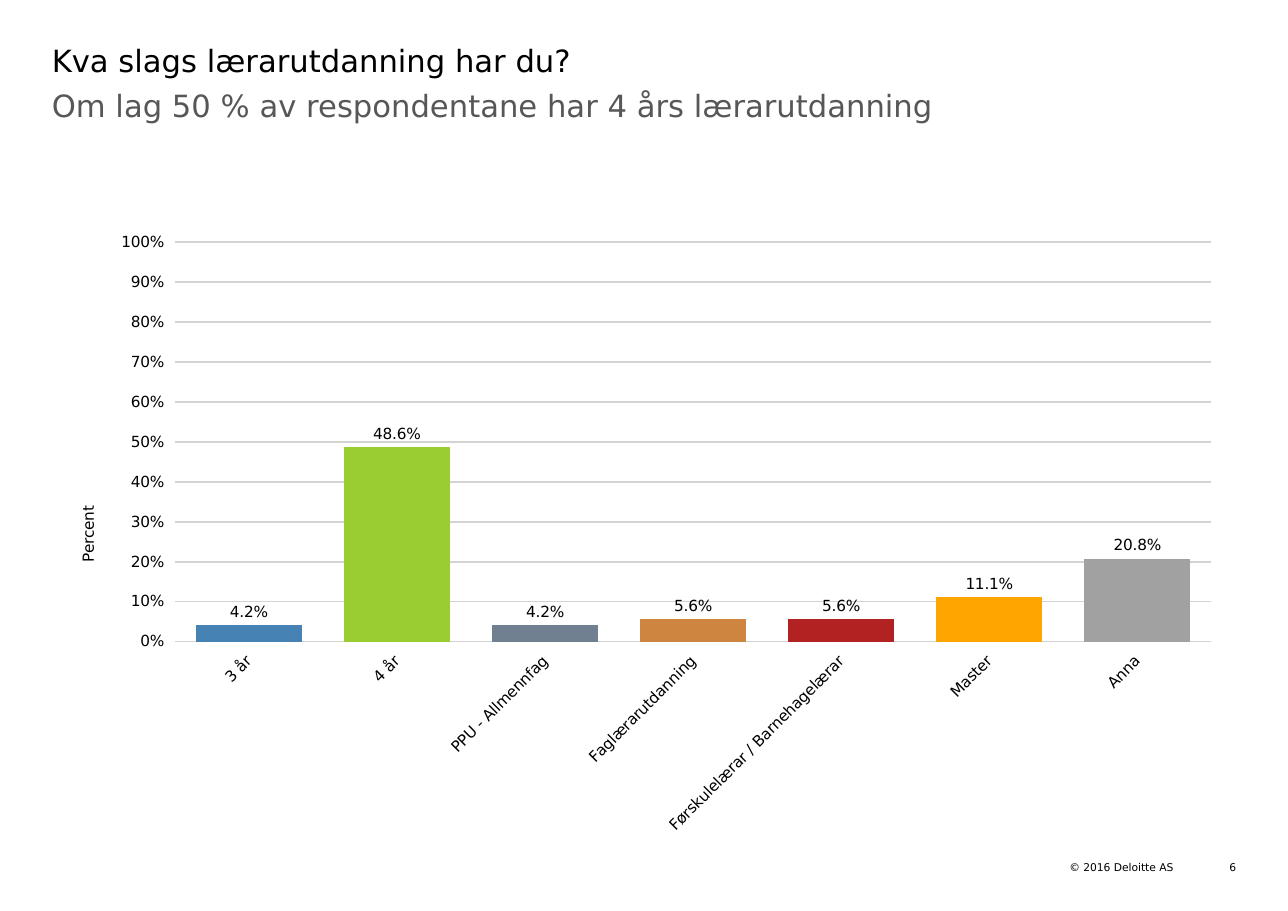
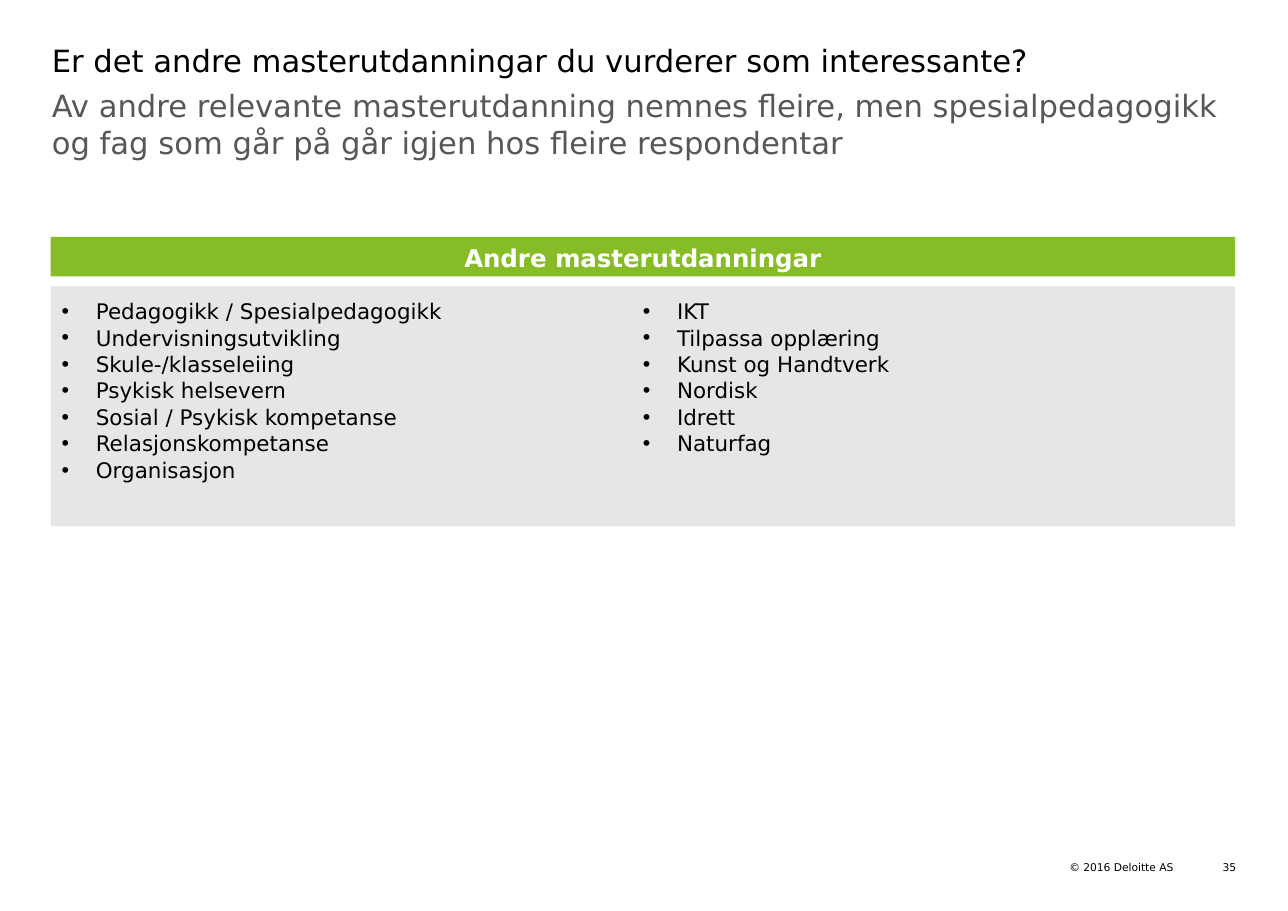
import dataclasses
import typing

import pptx
import pptx.chart.data
import pptx.dml.color
import pptx.enum.chart
import pptx.enum.shapes
import pptx.enum.text
import pptx.oxml
import pptx.oxml.ns
import pptx.util

ALIGN = pptx.enum.text.PP_ALIGN
ANCHOR = pptx.enum.text.MSO_ANCHOR
FONT = "DejaVu Sans"
BLACK, WHITE, GREY_TEXT = "000000", "FFFFFF", "575757"
GREEN, PANEL_GREY, GRID_GREY = "86BC25", "E7E6E6", "D3D3D3"
SLIDE_WIDTH, SLIDE_HEIGHT = 11.69, 8.27
INSET, INDENT = 0.1, 0.31
TITLE_LAYOUT, COMPARISON_LAYOUT = 1, 4


@dataclasses.dataclass(frozen=True)
class Area:
    left: float
    top: float
    width: float
    height: float

    def inches(self) -> list[int]:
        return [pptx.util.Inches(value) for value in dataclasses.astuple(self)]

    def column(self, index: int, count: int) -> "Area":
        width = (self.width - 2 * INSET) / count
        return Area(self.left + INSET + index * width, self.top + INSET,
                    width, self.height - 2 * INSET)


@dataclasses.dataclass(frozen=True)
class Style:
    size: float
    color: str = BLACK
    bold: bool = False
    align: ALIGN = ALIGN.LEFT
    anchor: ANCHOR = ANCHOR.TOP
    wrap: bool = True
    spacing: float = 1.0
    bullet: bool = False


@dataclasses.dataclass(frozen=True)
class Bar:
    category: str
    share: float
    color: str


TITLE_AREA = Area(0.47, 0.38, 10.74, 0.4)
SUBTITLE_AREA = Area(0.47, 0.79, 10.74, 0.91)
CHART_AREA = Area(0.47, 2.01, 10.74, 5.68)
BAND_AREA = Area(0.46, 2.15, 10.75, 0.36)
PANEL_AREA = Area(0.46, 2.6, 10.75, 2.18)
COPYRIGHT_AREA = Area(9.68, 7.81, 0.97, 0.12)
NUMBER_AREA = Area(10.92, 7.81, 0.3, 0.12)

TITLE_STYLE = Style(20)
SUBTITLE_STYLE = Style(20, GREY_TEXT)
FOOTER_STYLE = Style(7, align=ALIGN.RIGHT, anchor=ANCHOR.MIDDLE, wrap=False)
BAND_STYLE = Style(16, WHITE, True, ALIGN.CENTER, ANCHOR.MIDDLE, spacing=1.06)
LIST_STYLE = Style(14, spacing=1.03, bullet=True)

BARS = [
    Bar("3 år", 0.042, "4682B4"),
    Bar("4 år", 0.486, "9ACD32"),
    Bar("PPU - Allmennfag", 0.042, "708090"),
    Bar("Faglærarutdanning", 0.056, "CD853F"),
    Bar("Førskulelærar / Barnehagelærar", 0.056, "B22222"),
    Bar("Master", 0.111, "FFA500"),
    Bar("Anna", 0.208, "A1A1A1"),
]
SUBJECT_COLUMNS = [
    ["Pedagogikk / Spesialpedagogikk", "Undervisningsutvikling",
     "Skule-/klasseleiing", "Psykisk helsevern",
     "Sosial / Psykisk kompetanse", "Relasjonskompetanse", "Organisasjon"],
    ["IKT", "Tilpassa opplæring", "Kunst og Handtverk", "Nordisk", "Idrett",
     "Naturfag"],
]


def rgb(color: str) -> pptx.dml.color.RGBColor:
    return pptx.dml.color.RGBColor.from_string(color)


def format_font(font: typing.Any, style: Style) -> None:
    font.name = FONT
    font.size = pptx.util.Pt(style.size)
    font.bold = style.bold
    font.color.rgb = rgb(style.color)


def set_indent(para: typing.Any, bullet: bool) -> None:
    properties = para._p.get_or_add_pPr()
    indent = pptx.util.Inches(INDENT) if bullet else 0
    properties.set("marL", str(indent))
    properties.set("indent", str(-indent))
    mark = pptx.oxml.ns.qn("a:buChar" if bullet else "a:buNone")
    element = properties.makeelement(mark, {"char": "•"} if bullet else {})
    properties.append(element)


def write(box: typing.Any, lines: list[str], style: Style) -> None:
    frame = box.text_frame
    frame.text = "\n".join(lines)
    frame.auto_size = pptx.enum.text.MSO_AUTO_SIZE.NONE
    frame.word_wrap = style.wrap
    frame.vertical_anchor = style.anchor
    frame.margin_left = frame.margin_right = 0
    frame.margin_top = frame.margin_bottom = 0
    for para in frame.paragraphs:
        set_indent(para, style.bullet)
        para.alignment = style.align
        para.line_spacing = style.spacing
        para.space_before = para.space_after = pptx.util.Pt(0)
        for span in para.runs:
            format_font(span.font, style)


def fill_placeholder(page: typing.Any, index: int, area: Area,
                     lines: list[str], style: Style) -> None:
    box = page.placeholders[index]
    box.left, box.top, box.width, box.height = area.inches()
    write(box, lines, style)


def add_rectangle(page: typing.Any, area: Area, color: str) -> typing.Any:
    shape = page.shapes.add_shape(
        pptx.enum.shapes.MSO_SHAPE.RECTANGLE, *area.inches())
    shape.shadow.inherit = False
    shape.fill.solid()
    shape.fill.fore_color.rgb = rgb(color)
    shape.line.fill.background()
    return shape


def add_page(deck: typing.Any, layout: int, title: str, subtitle: str,
             number: int) -> typing.Any:
    page = deck.slides.add_slide(deck.slide_layouts[layout])
    fill_placeholder(page, 0, TITLE_AREA, [title], TITLE_STYLE)
    fill_placeholder(page, 1, SUBTITLE_AREA, [subtitle], SUBTITLE_STYLE)
    footers = [(COPYRIGHT_AREA, "© 2016 Deloitte AS"),
               (NUMBER_AREA, str(number))]
    for area, text in footers:
        write(page.shapes.add_textbox(*area.inches()), [text], FOOTER_STYLE)
    return page


def set_layout(parent: typing.Any, target: str, **shares: float) -> None:
    for old in parent.findall(pptx.oxml.ns.qn("c:layout")):
        parent.remove(old)
    inner = '<c:layoutTarget val="inner"/>' if target == "inner" else ""
    modes = "".join(f'<c:{axis}Mode val="edge"/>' for axis in "xy")
    values = "".join(f'<c:{name} val="{share}"/>'
                     for name, share in shares.items())
    layout = pptx.oxml.parse_xml(
        f'<c:layout {pptx.oxml.ns.nsdecls("c")}><c:manualLayout>'
        f'{inner}{modes}{values}</c:manualLayout></c:layout>')
    parent.insert(0 if target == "inner" else 1, layout)


def add_bar_chart(page: typing.Any, bars: list[Bar]) -> None:
    data = pptx.chart.data.CategoryChartData(number_format="0.0%")
    data.categories = [bar.category for bar in bars]
    data.add_series("Series 1", [bar.share for bar in bars])
    chart = page.shapes.add_chart(
        pptx.enum.chart.XL_CHART_TYPE.COLUMN_CLUSTERED,
        *CHART_AREA.inches(), data).chart
    chart.has_legend = chart.has_title = False
    style = Style(10)
    format_font(chart.font, style)

    plot = chart.plots[0]
    plot.gap_width = 40
    plot.vary_by_categories = False
    plot.has_data_labels = True
    labels = plot.data_labels
    labels.show_value = True
    labels.number_format = "0.0%"
    labels.number_format_is_linked = False
    labels.position = pptx.enum.chart.XL_LABEL_POSITION.OUTSIDE_END
    format_font(labels.font, style)
    for index, bar in enumerate(bars):
        fill = plot.series[0].points[index].format.fill
        fill.solid()
        fill.fore_color.rgb = rgb(bar.color)

    for axis in (chart.category_axis, chart.value_axis):
        axis.major_tick_mark = pptx.enum.chart.XL_TICK_MARK.CROSS
        axis.format.line.fill.background()
        format_font(axis.tick_labels.font, style)
    body = chart.category_axis._element.txPr.find(pptx.oxml.ns.qn("a:bodyPr"))
    body.set("rot", str(-45 * 60000))
    body.set("vert", "horz")

    values = chart.value_axis
    values.minimum_scale, values.maximum_scale = 0, 1
    values.major_unit = 0.1
    values.tick_labels.number_format = "0%"
    values.tick_labels.number_format_is_linked = False
    values.has_major_gridlines = True
    values.major_gridlines.format.line.color.rgb = rgb(GRID_GREY)
    values.major_gridlines.format.line.width = pptx.util.Pt(1)
    frame = values.axis_title.text_frame
    frame.text = "Percent"
    format_font(frame.paragraphs[0].runs[0].font, style)
    frame._txBody.find(pptx.oxml.ns.qn("a:bodyPr")).set(
        "rot", str(-90 * 60000))
    set_layout(values.axis_title._element, "title", x=0.02, y=0.45)
    plot_area = chart._chartSpace.chart.plotArea
    set_layout(plot_area, "inner", x=0.104, y=0.033, w=0.876, h=0.639)


def add_subject_lists(page: typing.Any) -> None:
    spare = page.placeholders[3].element
    spare.getparent().remove(spare)
    panel = add_rectangle(page, PANEL_AREA, PANEL_GREY).element
    panel.getparent().insert(2, panel)
    for index, subjects in enumerate(SUBJECT_COLUMNS):
        area = PANEL_AREA.column(index, len(SUBJECT_COLUMNS))
        fill_placeholder(page, 2 + 2 * index, area, subjects, LIST_STYLE)
    band = add_rectangle(page, BAND_AREA, GREEN)
    write(band, ["Andre masterutdanningar"], BAND_STYLE)


def main() -> None:
    deck = pptx.Presentation()
    deck.slide_width = pptx.util.Inches(SLIDE_WIDTH)
    deck.slide_height = pptx.util.Inches(SLIDE_HEIGHT)
    add_bar_chart(
        add_page(deck, TITLE_LAYOUT, "Kva slags lærarutdanning har du?",
                 "Om lag 50 % av respondentane har 4 års lærarutdanning", 6),
        BARS)
    add_subject_lists(
        add_page(deck, COMPARISON_LAYOUT,
                 "Er det andre masterutdanningar du vurderer som interessante?",
                 "Av andre relevante masterutdanning nemnes fleire, men "
                 "spesialpedagogikk og fag som går på går igjen hos fleire "
                 "respondentar", 35))
    deck.save("out.pptx")


if __name__ == "__main__":
    main()
